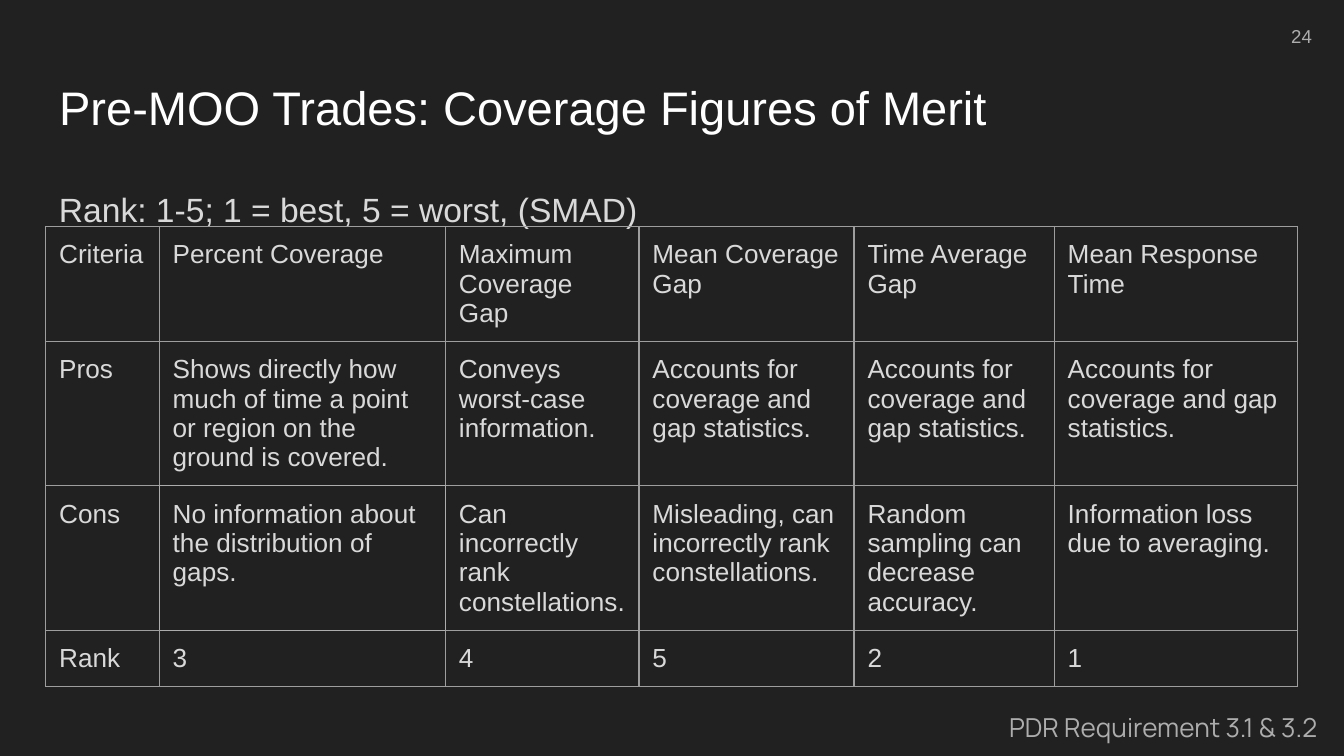
from dataclasses import dataclass

from lxml import etree
from pptx import Presentation
from pptx.dml.color import RGBColor
from pptx.enum.text import MSO_ANCHOR, MSO_AUTO_SIZE, PP_ALIGN
from pptx.oxml.ns import qn
from pptx.util import Pt

PX = 4572
TITLE_ONLY_LAYOUT = 5
TOP, MIDDLE = MSO_ANCHOR.TOP, MSO_ANCHOR.MIDDLE
LEFT, RIGHT = PP_ALIGN.LEFT, PP_ALIGN.RIGHT
GROW = MSO_AUTO_SIZE.SHAPE_TO_FIT_TEXT
FIXED = MSO_AUTO_SIZE.NONE


@dataclass(frozen=True)
class Theme:
    background: str = "212121"
    title_color: str = "FFFFFF"
    body_color: str = "D9D9D9"
    muted_color: str = "ADADAD"
    border_color: str = "9E9E9E"
    body_font: str = "Arial"
    footer_font: str = "Manrope"
    title_size: float = 25.2
    subtitle_size: float = 18
    table_size: float = 14
    footer_size: float = 14
    number_size: float = 10
    border_width: float = 0.75
    inset: int = 20


THEME = Theme()

COLUMN_WIDTHS = (169, 426, 288, 320, 298, 362)
ROW_HEIGHT = 84
COVERAGE_STATISTICS = "Accounts for coverage and gap statistics."
TRADES = (
    ("Criteria", "Percent Coverage", "Maximum Coverage Gap",
     "Mean Coverage Gap", "Time Average Gap", "Mean Response Time"),
    ("Pros",
     "Shows directly how much of time a point or region on the ground is covered.",
     "Conveys worst-case information.",
     COVERAGE_STATISTICS, COVERAGE_STATISTICS, COVERAGE_STATISTICS),
    ("Cons", "No information about the distribution of gaps.",
     "Can incorrectly rank constellations.",
     "Misleading, can incorrectly rank constellations.",
     "Random sampling can decrease accuracy.",
     "Information loss due to averaging."),
    ("Rank", "3", "4", "5", "2", "1"),
)
LIGHT_BORDER_CELL = (2, 1)
EDGES = {"a:lnL": (0, -1), "a:lnR": (0, 1), "a:lnT": (-1, 0), "a:lnB": (1, 0)}


def emu(*lengths):
    return [length * PX for length in lengths]


def set_insets(target):
    target.margin_left = target.margin_right = THEME.inset * PX
    target.margin_top = target.margin_bottom = THEME.inset * PX


def format_paragraph(paragraph, text, size, color, font=THEME.body_font, align=LEFT):
    paragraph.text = text
    paragraph.alignment = align
    paragraph.font.size = Pt(size)
    paragraph.font.name = font
    paragraph.font.color.rgb = RGBColor.from_string(color)


def fill_frame(frame, *text_style, anchor=TOP, auto_size=FIXED, **paragraph_style):
    set_insets(frame)
    frame.word_wrap = True
    frame.auto_size = auto_size
    frame.vertical_anchor = anchor
    paragraph = frame.paragraphs[0]
    format_paragraph(paragraph, *text_style, **paragraph_style)
    return paragraph


def add_title(slide, box):
    title = slide.shapes.title
    title.left, title.top, title.width, title.height = emu(*box)
    paragraph = fill_frame(title.text_frame, "Pre-MOO Trades: Coverage Figures of Merit",
                           THEME.title_size, THEME.title_color)
    paragraph.line_spacing = 1.0


def add_subtitle(slide, box):
    subtitle = slide.shapes.add_textbox(*emu(*box))
    paragraph = fill_frame(subtitle.text_frame, "Rank: 1-5; 1 = best, 5 = worst, (SMAD)",
                           THEME.subtitle_size, THEME.body_color)
    paragraph.line_spacing = 1.15
    paragraph.space_after = Pt(12)


def add_cell_borders(cell, position):
    row, column = position
    properties = cell._tc.get_or_add_tcPr()
    for tag, (row_step, column_step) in EDGES.items():
        touching = (position, (row + row_step, column + column_step))
        color = THEME.muted_color if LIGHT_BORDER_CELL in touching else THEME.border_color
        line = etree.SubElement(properties, qn(tag), w=str(Pt(THEME.border_width)))
        fill = etree.SubElement(line, qn("a:solidFill"))
        etree.SubElement(fill, qn("a:srgbClr"), val=color)


def add_trade_table(slide, left, top):
    frame = slide.shapes.add_table(
        len(TRADES), len(COLUMN_WIDTHS),
        *emu(left, top, sum(COLUMN_WIDTHS), ROW_HEIGHT * len(TRADES)))
    table = frame.table
    table.first_row = table.horz_banding = False
    for column, width in zip(table.columns, COLUMN_WIDTHS):
        column.width = width * PX
    for row_index, texts in enumerate(TRADES):
        table.rows[row_index].height = ROW_HEIGHT * PX
        for column_index, text in enumerate(texts):
            cell = table.cell(row_index, column_index)
            set_insets(cell)
            cell.vertical_anchor = TOP
            format_paragraph(cell.text_frame.paragraphs[0], text,
                             THEME.table_size, THEME.body_color)
            add_cell_borders(cell, (row_index, column_index))
            cell.fill.background()


def add_slide_number(slide, box):
    number = slide.shapes.add_textbox(*emu(*box))
    fill_frame(number.text_frame, "24", THEME.number_size, THEME.muted_color,
               anchor=MIDDLE, align=RIGHT)


def add_requirement_note(slide, box):
    note = slide.shapes.add_textbox(*emu(*box))
    fill_frame(note.text_frame, "PDR Requirement 3.1 & 3.2", THEME.footer_size,
               THEME.muted_color, auto_size=GROW, font=THEME.footer_font)


def build_trade_slide(presentation):
    slide = presentation.slides.add_slide(presentation.slide_layouts[TITLE_ONLY_LAYOUT])
    slide.background.fill.solid()
    slide.background.fill.fore_color.rgb = RGBColor.from_string(THEME.background)
    add_title(slide, (68, 97, 1864, 126))
    add_subtitle(slide, (68, 252, 1864, 748))
    add_trade_table(slide, 68, 337)
    add_slide_number(slide, (1852, 11, 120, 86))
    add_requirement_note(slide, (1482, 1038, 544, 88))


def main():
    presentation = Presentation()
    presentation.slide_width, presentation.slide_height = emu(2000, 1125)
    build_trade_slide(presentation)
    presentation.save("out.pptx")


if __name__ == "__main__":
    main()
